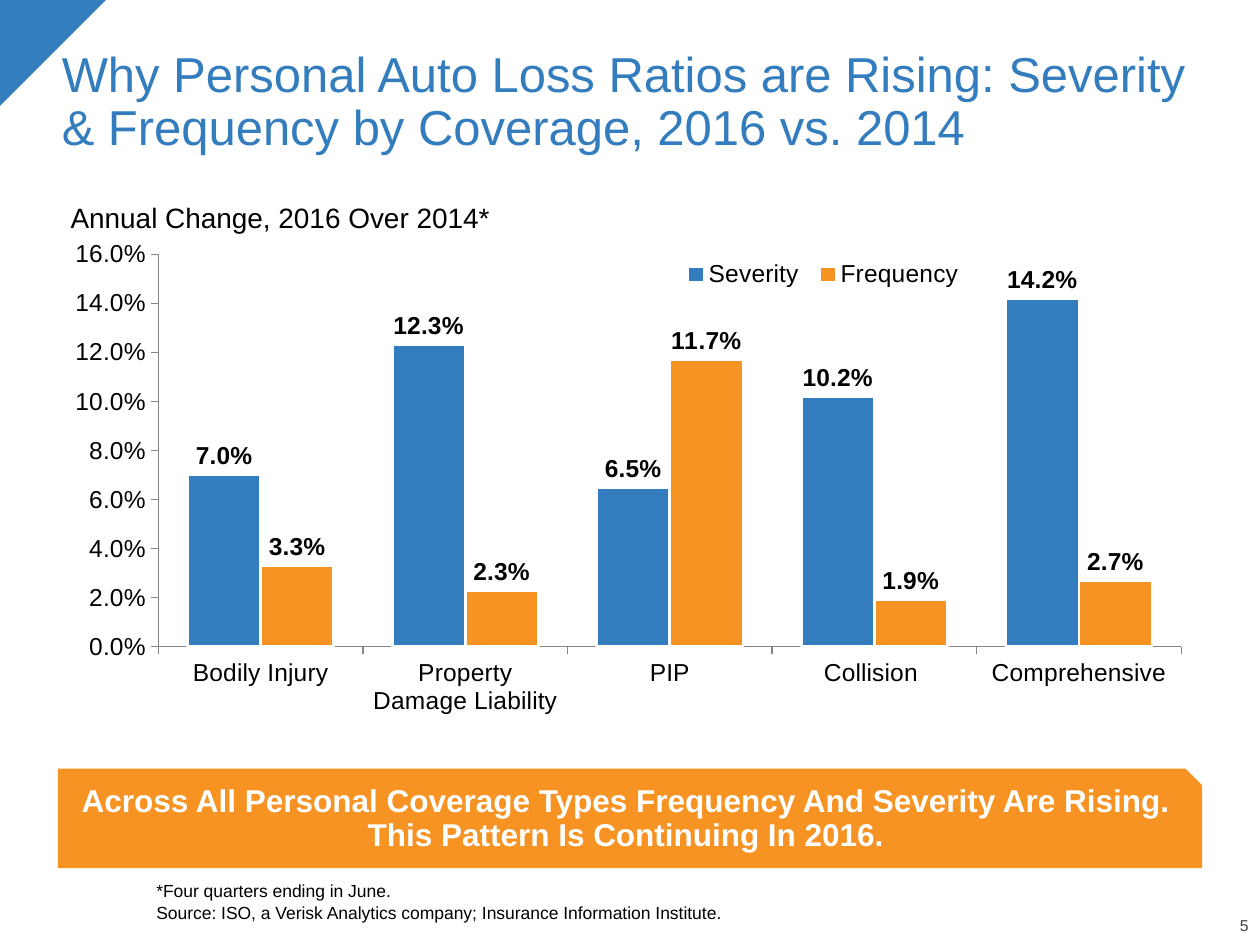
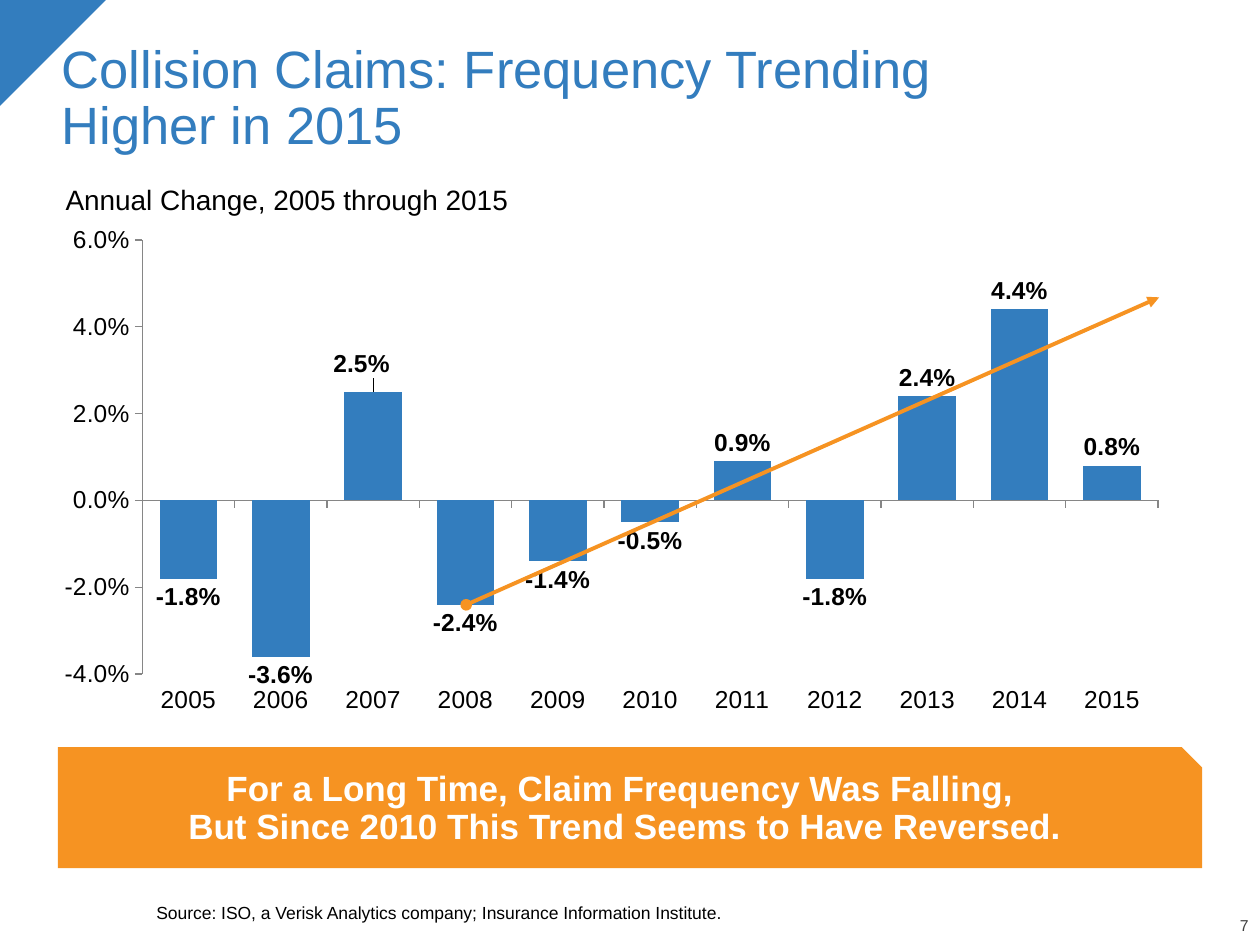
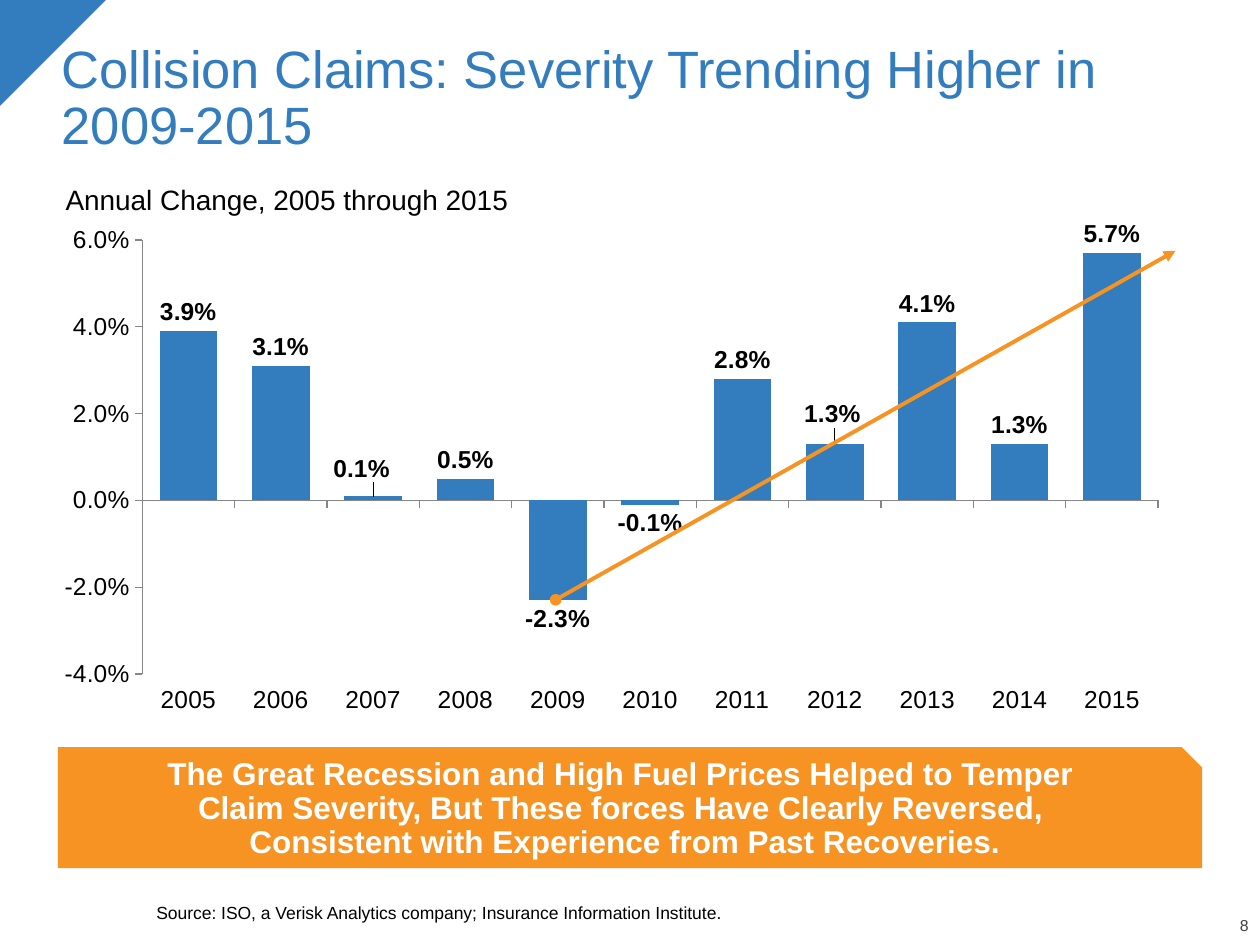
import collections

import lxml.etree
import pptx
import pptx.chart.data
import pptx.dml.color
import pptx.enum.chart
import pptx.enum.shapes
import pptx.enum.text
import pptx.oxml
import pptx.oxml.ns
import pptx.util

BLUE = pptx.dml.color.RGBColor(0x33, 0x7D, 0xBE)
ORANGE = pptx.dml.color.RGBColor(0xF6, 0x93, 0x22)
WHITE = pptx.dml.color.RGBColor(0xFF, 0xFF, 0xFF)
BLACK = pptx.dml.color.RGBColor(0, 0, 0)
DARK_GRAY = pptx.dml.color.RGBColor(0x40, 0x40, 0x40)
AXIS_GRAY = pptx.dml.color.RGBColor(0x86, 0x86, 0x86)

FONT = "Arial"
PERCENT = "0.0%"
LINE_SPACING = 0.9
LEFT = pptx.enum.text.PP_ALIGN.LEFT
CENTER = pptx.enum.text.PP_ALIGN.CENTER
RIGHT = pptx.enum.text.PP_ALIGN.RIGHT
TOP = pptx.enum.text.MSO_ANCHOR.TOP
MIDDLE = pptx.enum.text.MSO_ANCHOR.MIDDLE
BOTTOM = pptx.enum.text.MSO_ANCHOR.BOTTOM

# Slide grid: 100 columns by 75 rows
SLIDE_WIDTH = pptx.util.Inches(10)
SLIDE_HEIGHT = pptx.util.Inches(7.5)
COLUMN = SLIDE_WIDTH / 100
ROW = SLIDE_HEIGHT / 75

Box = collections.namedtuple("Box", "left top width height")
TITLE_BOX = Box(3.9, 2.5, 92.5, 10.4)
CORNER_BOX = Box(0, 0, 8.4, 8.4)
SOURCE_BOX = Box(12.4, 68.8, 84, 4.5)
PAGE_NUMBER_BOX = Box(94.3, 72.9, 4.8, 1.3)
TREND_SUBTITLE_BOX = Box(4.2, 14.3, 92.5, 4.3)
TREND_CHART_BOX = Box(3.4, 16.1, 90.7, 43.3)
TREND_BANNER_BOX = Box(4.6, 59.3, 90.8, 9.6)

SOURCE = "Source: ISO, a Verisk Analytics company; Insurance Information Institute."
YEARS = [str(year) for year in range(2005, 2016)]


def to_emu(box):
    """Turn a box in grid units into slide lengths."""
    return (int(box.left * COLUMN), int(box.top * ROW),
            int(box.width * COLUMN), int(box.height * ROW))


def move(shape, box):
    shape.left, shape.top, shape.width, shape.height = to_emu(box)


def style_font(font, size, color, bold=False):
    font.name = FONT
    font.size = pptx.util.Pt(size)
    font.bold = bold
    font.color.rgb = color


def write_text(shape, paragraphs, size, color, align=LEFT, anchor=TOP,
               bold=False, insets=(0.1, 0.05, 0.1, 0.05), gap=0):
    """Fill a shape; each paragraph is a list of lines."""
    frame = shape.text_frame
    frame.word_wrap = True
    frame.auto_size = pptx.enum.text.MSO_AUTO_SIZE.NONE
    frame.vertical_anchor = anchor
    (frame.margin_left, frame.margin_top, frame.margin_right,
     frame.margin_bottom) = [pptx.util.Inches(inset) for inset in insets]
    for number, lines in enumerate(paragraphs):
        paragraph = frame.add_paragraph() if number else frame.paragraphs[0]
        properties = paragraph._p.get_or_add_pPr()
        properties.set("marL", "0")
        properties.set("indent", "0")
        lxml.etree.SubElement(properties, pptx.oxml.ns.qn("a:buNone"))
        paragraph.alignment = align
        paragraph.line_spacing = LINE_SPACING
        paragraph.space_before = pptx.util.Pt(gap if number else 0)
        for line_number, line in enumerate(lines):
            if line_number:
                paragraph.add_line_break()
            run = paragraph.add_run()
            run.text = line
            style_font(run.font, size, color, bold)


# Shared slide parts

def add_corner(slide, box):
    corner = slide.shapes.add_shape(
        pptx.enum.shapes.MSO_SHAPE.RIGHT_TRIANGLE, *to_emu(box))
    corner.rotation = 90
    corner.shadow.inherit = False
    corner.fill.solid()
    corner.fill.fore_color.rgb = BLUE
    corner.line.fill.background()


def add_page_number(slide, box, number):
    text_box = slide.shapes.add_textbox(*to_emu(box))
    write_text(text_box, [[str(number)]], 9, DARK_GRAY, align=RIGHT,
               anchor=BOTTOM, insets=(0, 0, 0, 0))


def add_banner(slide, box, lines, size):
    banner = slide.shapes.add_shape(
        pptx.enum.shapes.MSO_SHAPE.SNIP_1_RECTANGLE, *to_emu(box))
    banner.shadow.inherit = False
    banner.fill.solid()
    banner.fill.fore_color.rgb = ORANGE
    banner.line.fill.background()
    write_text(banner, [lines], size, WHITE, align=CENTER, anchor=MIDDLE,
               bold=True, insets=(0.1, 0.05, 0.1, 0.1))


def add_base_slide(presentation, title_lines, title_size, subtitle,
                   subtitle_box, notes, page_number):
    slide = presentation.slides.add_slide(presentation.slide_layouts[3])
    title, subtitle_holder, source_holder = slide.placeholders
    move(title, TITLE_BOX)
    write_text(title, [title_lines], title_size, BLUE, anchor=BOTTOM)
    move(subtitle_holder, subtitle_box)
    write_text(subtitle_holder, [[subtitle]], 16, BLACK)
    move(source_holder, SOURCE_BOX)
    write_text(source_holder, [[note] for note in notes], 10, BLACK,
               anchor=BOTTOM, insets=(0, 0, 0, 0), gap=2)
    add_corner(slide, CORNER_BOX)
    add_page_number(slide, PAGE_NUMBER_BOX, page_number)
    return slide


# Charts

def chart_element(xml):
    """Parse a chart fragment, filling in the namespaces."""
    namespaces = pptx.oxml.ns.nsdecls("c", "a")
    return pptx.oxml.parse_xml(xml.replace(">", f" {namespaces}>", 1))


def manual_layout(left, top, width=None, height=None, inner=False):
    """Place a chart part by shares of the chart's size."""
    values = ['<c:layoutTarget val="inner"/>'] if inner else []
    if width is not None:
        values.append('<c:xMode val="edge"/><c:yMode val="edge"/>')
    for tag, share in zip("xywh", (left, top, width, height)):
        if share is not None:
            values.append(f'<c:{tag} val="{share}"/>')
    return chart_element("<c:layout><c:manualLayout>" + "".join(values)
                         + "</c:manualLayout></c:layout>")


def format_axis(axis):
    axis.has_major_gridlines = False
    axis.major_tick_mark = pptx.enum.chart.XL_TICK_MARK.OUTSIDE
    axis.minor_tick_mark = pptx.enum.chart.XL_TICK_MARK.NONE
    axis.format.line.color.rgb = AXIS_GRAY
    axis.format.line.width = pptx.util.Pt(0.75)


def add_column_chart(slide, box, categories, series_values, plot_area,
                     gap_width, limits):
    data = pptx.chart.data.CategoryChartData(number_format=PERCENT)
    data.categories = categories
    for name, values in series_values.items():
        data.add_series(name, values)
    chart = slide.shapes.add_chart(
        pptx.enum.chart.XL_CHART_TYPE.COLUMN_CLUSTERED, *to_emu(box), data).chart
    chart.has_title = False
    chart.has_legend = False
    style_font(chart.font, 14, BLACK)

    # Transparent background and fixed plot area
    space = chart._chartSpace
    space.find(pptx.oxml.ns.qn("c:chart")).addnext(chart_element(
        "<c:spPr><a:noFill/><a:ln><a:noFill/></a:ln></c:spPr>"))
    area = space.xpath("c:chart/c:plotArea")[0]
    for layout in area.xpath("c:layout"):
        area.remove(layout)
    area.insert(0, manual_layout(*plot_area, inner=True))

    format_axis(chart.category_axis)
    chart.category_axis.tick_label_position = (
        pptx.enum.chart.XL_TICK_LABEL_POSITION.LOW)
    format_axis(chart.value_axis)
    chart.value_axis.minimum_scale, chart.value_axis.maximum_scale = limits
    chart.value_axis.major_unit = 0.02
    chart.value_axis.tick_labels.number_format = PERCENT
    chart.value_axis.tick_labels.number_format_is_linked = False

    plot = chart.plots[0]
    plot.gap_width = gap_width
    plot.vary_by_categories = False
    for series, color in zip(plot.series, (BLUE, ORANGE)):
        series.invert_if_negative = False
        series.format.fill.solid()
        series.format.fill.fore_color.rgb = color
        labels = series.data_labels
        labels.show_value = True
        labels.number_format = PERCENT
        labels.number_format_is_linked = False
        labels.position = pptx.enum.chart.XL_LABEL_POSITION.OUTSIDE_END
        style_font(labels.font, 14, BLACK, bold=True)
    return chart


def add_legend(chart, area):
    chart.has_legend = True
    chart.legend.position = pptx.enum.chart.XL_LEGEND_POSITION.TOP
    chart.legend.include_in_layout = False
    style_font(chart.legend.font, 14, BLACK)
    legend = chart.legend._element
    for layout in legend.xpath("c:layout"):
        legend.remove(layout)
    legend.xpath("c:legendPos")[0].addnext(manual_layout(*area))


def shift_label(series, point, offset):
    """Nudge one value label by shares of the chart's size."""
    label = series.points[point].data_label
    style_font(label.font, 14, BLACK, bold=True)
    label.position = pptx.enum.chart.XL_LABEL_POSITION.OUTSIDE_END
    index = series.data_labels._element.xpath(
        f'c:dLbl/c:idx[@val="{point}"]')[0]
    index.addnext(chart_element(
        f'<c:numFmt formatCode="{PERCENT}" sourceLinked="0"></c:numFmt>'))
    index.addnext(manual_layout(*offset))


def add_trend_arrow(slide, start, end):
    arrow = slide.shapes.add_connector(
        pptx.enum.shapes.MSO_CONNECTOR.STRAIGHT,
        int(start[0] * COLUMN), int(start[1] * ROW),
        int(end[0] * COLUMN), int(end[1] * ROW))
    arrow.line.color.rgb = ORANGE
    arrow.line.width = pptx.util.Pt(2.25)
    line = arrow.line._get_or_add_ln()
    for tag, kind in (("a:headEnd", "oval"), ("a:tailEnd", "triangle")):
        lxml.etree.SubElement(line, pptx.oxml.ns.qn(tag)).set("type", kind)
    lxml.etree.SubElement(arrow._element.spPr, pptx.oxml.ns.qn("a:effectLst"))


# Slide types

def build_coverage_slide(presentation):
    slide = add_base_slide(
        presentation,
        ["Why Personal Auto Loss Ratios are Rising: Severity & Frequency "
         "by Coverage, 2016 vs. 2014"], 28,
        "Annual Change, 2016 Over 2014*", Box(4.6, 15.7, 92.5, 4.3),
        ["*Four quarters ending in June.", SOURCE], 5)
    add_banner(slide, Box(4.6, 61, 90.8, 7.9),
               ["Across All Personal Coverage Types Frequency And Severity "
                "Are Rising. This Pattern Is Continuing In 2016."], 18)
    chart = add_column_chart(
        slide, Box(4.6, 15.2, 90.7, 45.4),
        ["Bodily Injury", "Property Damage Liability", "PIP", "Collision ",
         "Comprehensive"],
        {"Severity": (0.07, 0.123, 0.065, 0.102, 0.142),
         "Frequency": (0.033, 0.023, 0.117, 0.019, 0.027)},
        (0.088, 0.11, 0.895, 0.686), 80, (0, 0.16))
    for series in chart.plots[0].series:
        series.format.line.color.rgb = WHITE
        series.format.line.width = pptx.util.Pt(1.5)
    add_legend(chart, (0.54, 0.11, 0.26, 0.07))


def build_trend_slide(presentation, title_lines, page_number, banner_lines,
                      banner_size, values, label_shifts, start, end):
    slide = add_base_slide(
        presentation, title_lines, 30, "Annual Change, 2005 through 2015",
        TREND_SUBTITLE_BOX, [SOURCE], page_number)
    add_banner(slide, TREND_BANNER_BOX, banner_lines, banner_size)
    chart = add_column_chart(
        slide, TREND_CHART_BOX, YEARS, {"Series 1": values},
        (0.087, 0.068, 0.889, 0.796), 60, (-0.04, 0.06))
    for point, offset in label_shifts.items():
        shift_label(chart.plots[0].series[0], point, offset)
    add_trend_arrow(slide, start, end)


def main():
    presentation = pptx.Presentation()
    presentation.slide_width = SLIDE_WIDTH
    presentation.slide_height = SLIDE_HEIGHT
    build_coverage_slide(presentation)
    build_trend_slide(
        presentation,
        ["Collision Claims: Frequency Trending", "Higher in 2015"], 7,
        ["For a Long Time, Claim Frequency Was Falling, ",
         "But Since 2010 This Trend Seems to Have Reversed."], 20,
        (-0.018, -0.036, 0.025, -0.024, -0.014, -0.005, 0.009, -0.018,
         0.024, 0.044, 0.008),
        {2: (-0.01, -0.016)}, (37, 48), (92, 23.6))
    build_trend_slide(
        presentation,
        ["Collision Claims: Severity Trending Higher in 2009-2015"], 8,
        ["The Great Recession and High Fuel Prices Helped to Temper ",
         "Claim Severity, But These forces Have Clearly Reversed, ",
         "Consistent with Experience from Past Recoveries."], 18,
        (0.039, 0.031, 0.001, 0.005, -0.023, -0.001, 0.028, 0.013,
         0.041, 0.013, 0.057),
        {2: (-0.01, -0.016), 7: (-0.002, -0.02)}, (44.1, 47.6), (93.3, 19.9))
    presentation.save("out.pptx")


if __name__ == "__main__":
    main()
